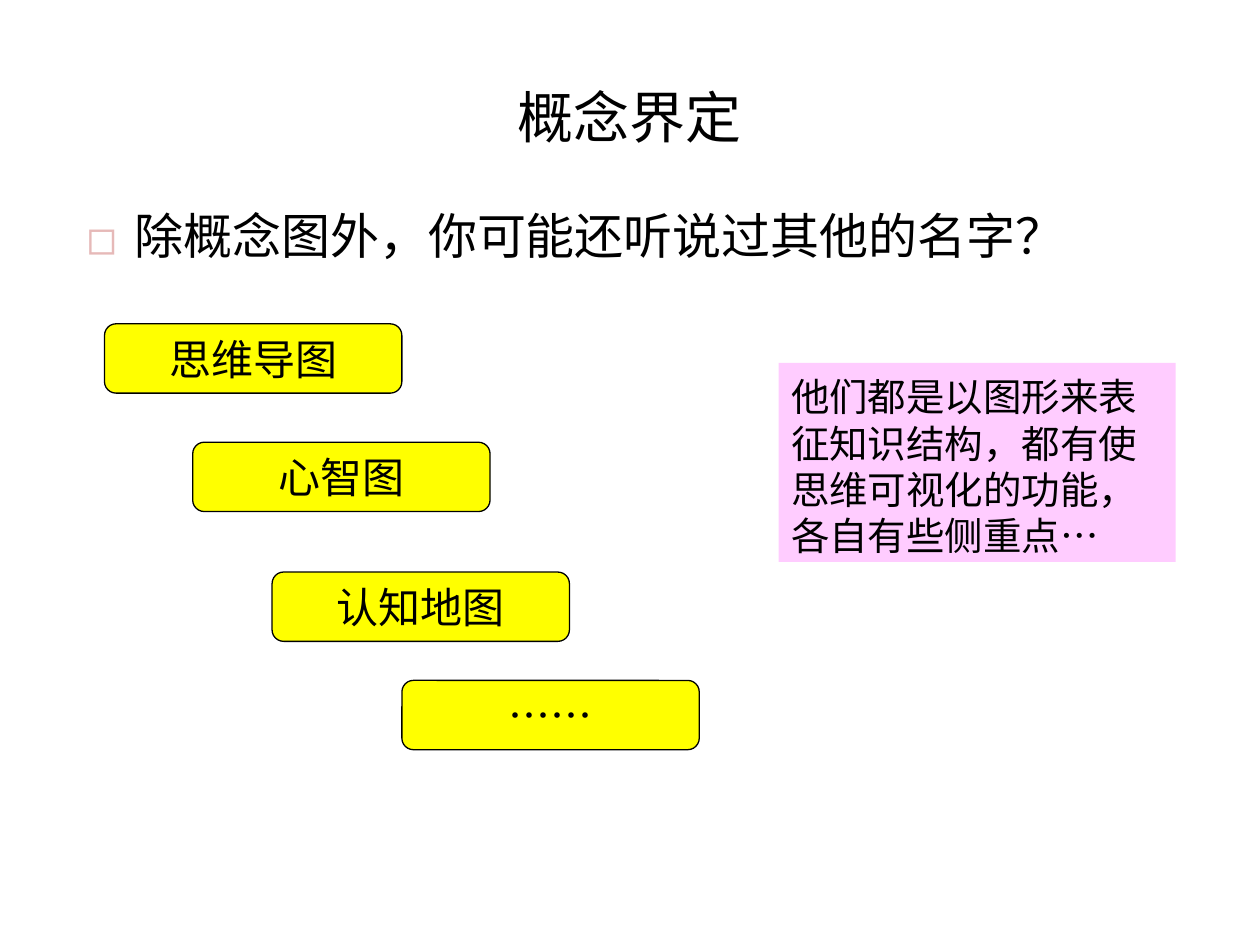
from lxml import etree
from pptx import Presentation
from pptx.dml.color import RGBColor
from pptx.enum import shapes, text
from pptx.oxml import ns
from pptx.util import Inches, Pt

FONT = "Noto Sans CJK SC"
TERMS = [
    ("思维导图", 0.83, 2.57),
    ("心智图", 1.53, 3.51),
    ("认知地图", 2.16, 4.54),
    ("……", 3.19, 5.4),
]


def color(value):
    """Turn a hex string into a colour."""
    return RGBColor.from_string(value)


def write(tf, words, size, align=text.PP_ALIGN.LEFT,
          anchor=text.MSO_ANCHOR.TOP, spacing=None, bullet=None):
    """Fill a text frame with one formatted paragraph."""
    tf.word_wrap = True
    tf.vertical_anchor = anchor
    p = tf.paragraphs[0]
    p.alignment = align
    p.space_before = Pt(0)
    if spacing:
        p.line_spacing = Pt(spacing)
    if bullet:
        char, tint, indent = bullet
        pPr = p._p.get_or_add_pPr()
        pPr.set("marL", str(Inches(indent)))
        pPr.set("indent", str(-Inches(indent)))
        clr = etree.SubElement(pPr, ns.qn("a:buClr"))
        etree.SubElement(clr, ns.qn("a:srgbClr"), val=tint)
        etree.SubElement(pPr, ns.qn("a:buFont"), typeface=FONT)
        etree.SubElement(pPr, ns.qn("a:buChar"), char=char)
    r = p.add_run()
    r.text = words
    r.font.size = Pt(size)
    r.font.name = FONT
    r.font.color.rgb = color("000000")
    rPr = r._r.get_or_add_rPr()
    rPr.set("lang", "zh-CN")
    rPr.find(ns.qn("a:latin")).addnext(
        etree.Element(ns.qn("a:ea"), typeface=FONT))


def add_title(s, x, y, w, h):
    """Place the slide title."""
    sp = s.shapes.title
    sp.left, sp.top, sp.width, sp.height = map(Inches, (x, y, w, h))
    write(sp.text_frame, "概念界定", 32, text.PP_ALIGN.CENTER,
          text.MSO_ANCHOR.MIDDLE)


def add_question(s, x, y, w, h):
    """Place the bulleted question."""
    sp = s.shapes.add_textbox(*map(Inches, (x, y, w, h)))
    write(sp.text_frame, "除概念图外，你可能还听说过其他的名字？", 28,
          spacing=36, bullet=("◻", "E6B9B8", 0.38))


def add_box(s, kind, x, y, w, h, fill, line=None):
    """Add a filled shape and return its text frame."""
    sp = s.shapes.add_shape(kind, *map(Inches, (x, y, w, h)))
    sp.shadow.inherit = False
    sp.fill.solid()
    sp.fill.fore_color.rgb = color(fill)
    if line:
        sp.line.color.rgb = color(line)
        sp.line.width = Pt(0.75)
    else:
        sp.line.fill.background()
    return sp.text_frame


def add_terms(s, w, h):
    """Place the descending row of related terms."""
    for words, x, y in TERMS:
        tf = add_box(s, shapes.MSO_SHAPE.FLOWCHART_ALTERNATE_PROCESS,
                     x, y, w, h, "FFFF00", "000000")
        write(tf, words, 24, text.PP_ALIGN.CENTER, text.MSO_ANCHOR.MIDDLE)


def add_remark(s, x, y, w, h):
    """Place the pink remark."""
    tf = add_box(s, shapes.MSO_SHAPE.RECTANGLE, x, y, w, h, "FFCCFF")
    tf.margin_top = Inches(0.08)
    tf.margin_bottom = Inches(0.02)
    write(tf, "他们都是以图形来表征知识结构，都有使思维可视化的功能，"
              "各自有些侧重点…", 22, spacing=26.5)


def main():
    """Build and save the slide."""
    prs = Presentation()
    prs.slide_width, prs.slide_height = Inches(10), Inches(7.5)
    s = prs.slides.add_slide(prs.slide_layouts[5])
    add_title(s, 0.5, 0.3, 9, 1.25)
    add_question(s, 0.59, 1.55, 8.03, 1.29)
    add_terms(s, 2.36, 0.55)
    add_remark(s, 6.18, 2.88, 3.15, 1.58)
    prs.save("out.pptx")


if __name__ == "__main__":
    main()
